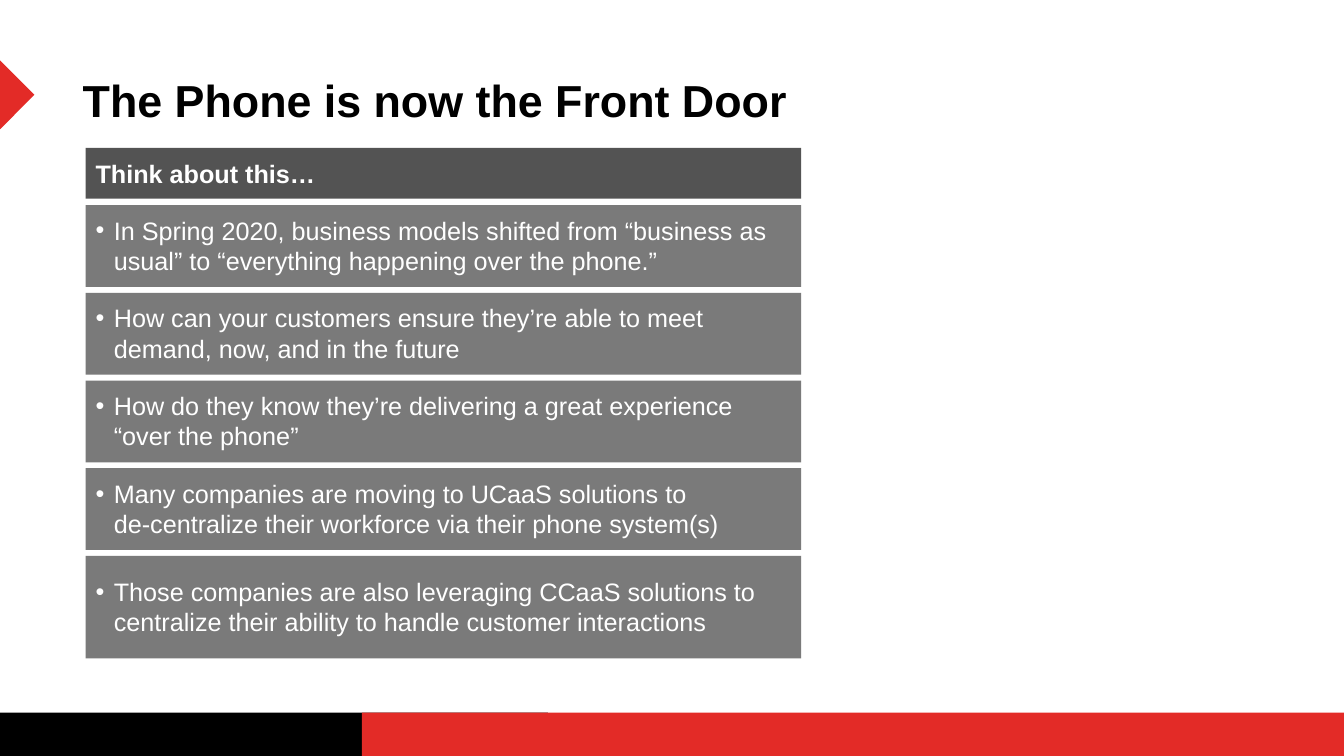
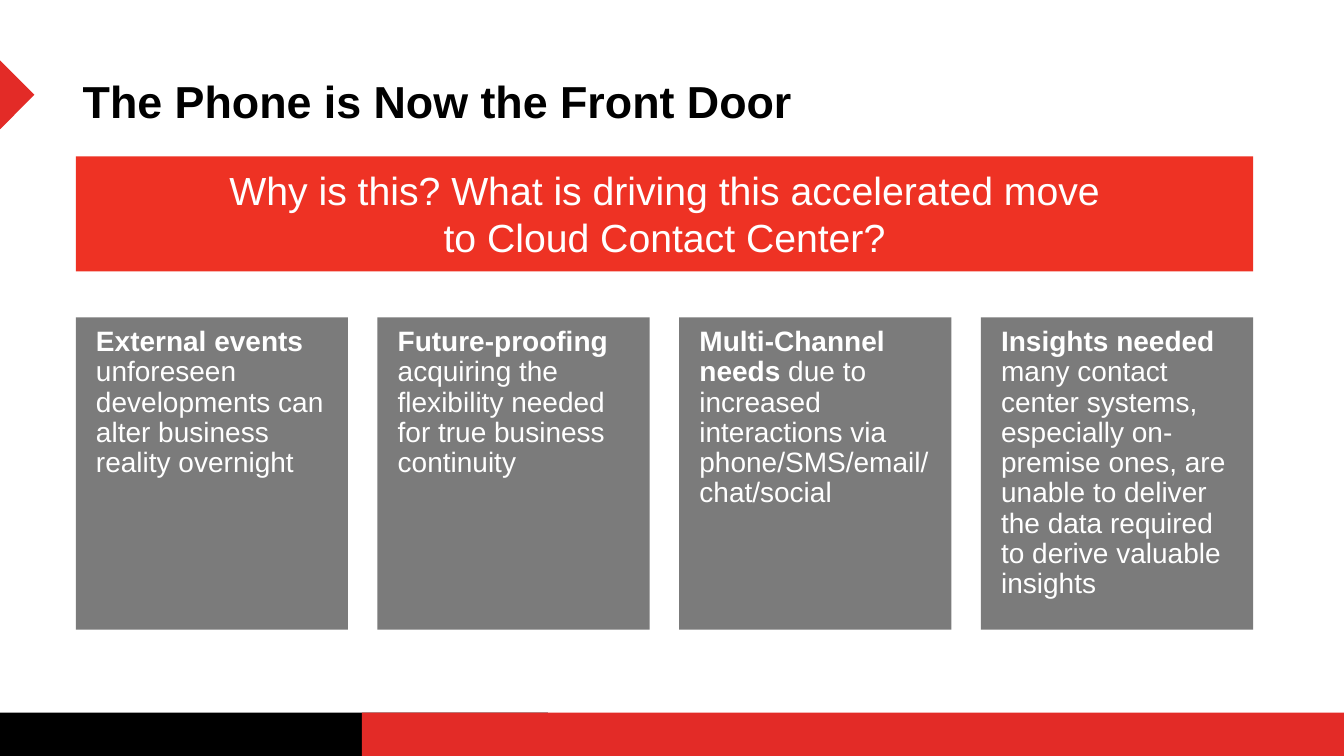
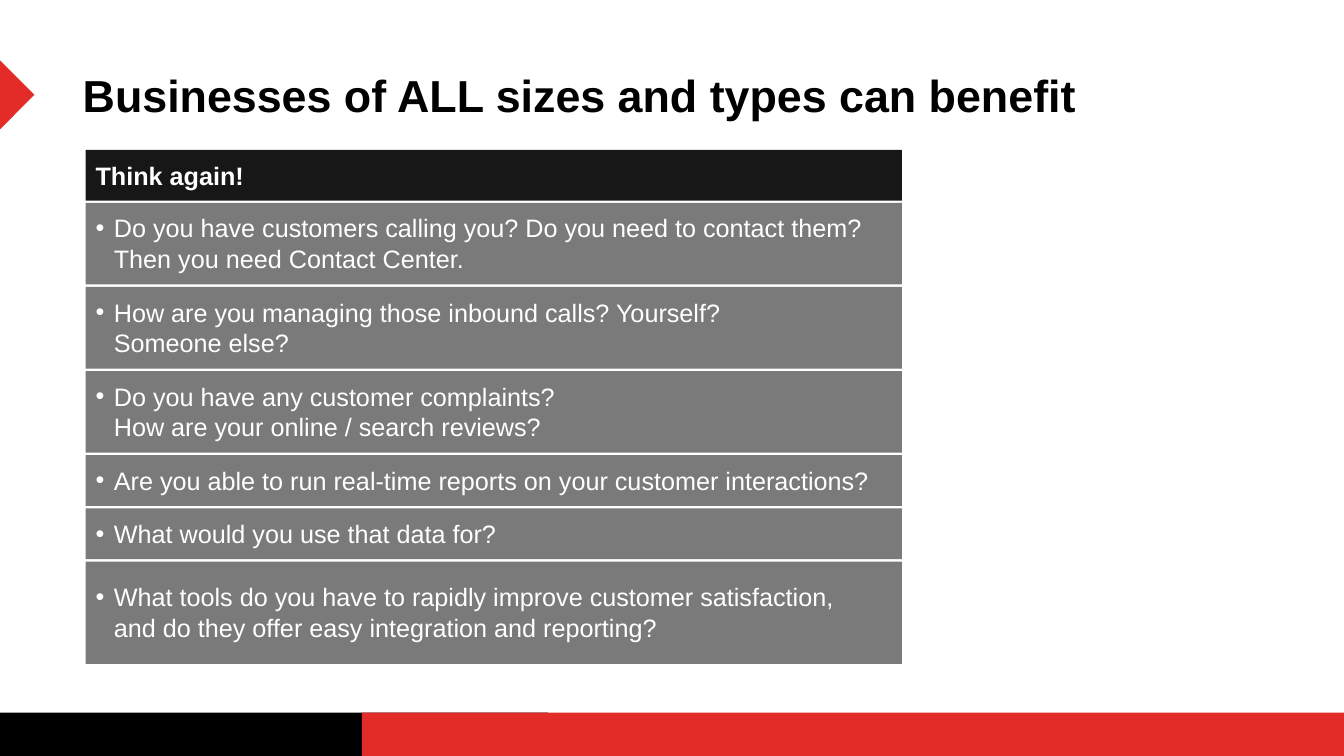
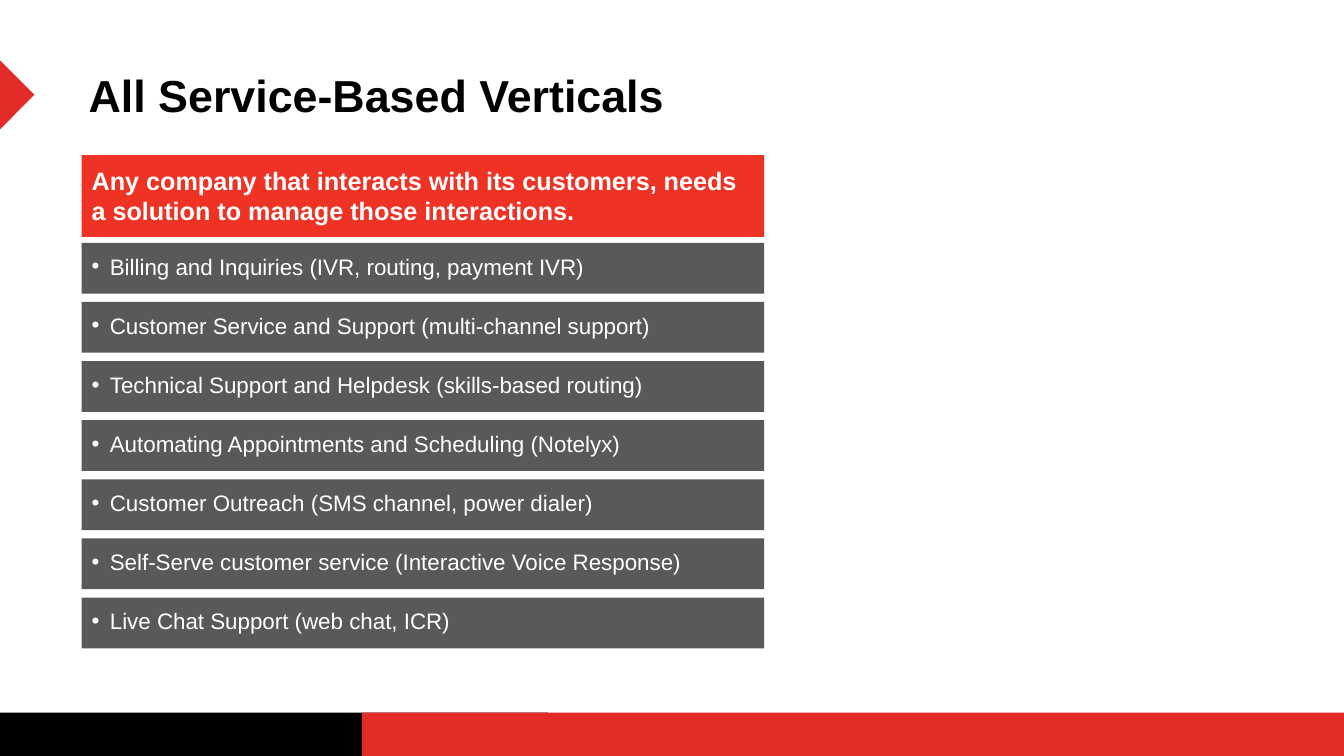
from dataclasses import dataclass

from lxml import etree
from pptx import Presentation
from pptx.dml.color import RGBColor
from pptx.enum.shapes import MSO_SHAPE
from pptx.enum.text import MSO_ANCHOR, MSO_AUTO_SIZE, PP_ALIGN
from pptx.oxml.ns import qn
from pptx.util import Cm, Pt

RECTANGLE = MSO_SHAPE.RECTANGLE
TRIANGLE = MSO_SHAPE.ISOSCELES_TRIANGLE
TOP, BOTTOM = MSO_ANCHOR.TOP, MSO_ANCHOR.BOTTOM
LEFT, CENTER = PP_ALIGN.LEFT, PP_ALIGN.CENTER
NO_AUTOFIT = MSO_AUTO_SIZE.NONE
TITLE_ONLY = 5


@dataclass(frozen=True)
class Fill:
    color: str
    opacity: int = 100


@dataclass(frozen=True)
class Theme:
    font: str = "Arial"
    black: str = "000000"
    white: str = "FFFFFF"
    band_red: Fill = Fill("E32B27")
    band_black: Fill = Fill("000000")
    accent: Fill = Fill("EE3224")
    charcoal: Fill = Fill("434343", 91)
    ink: Fill = Fill("000000", 91)
    gray: Fill = Fill("595959", 80)
    solid_gray: Fill = Fill("595959")
    card: Fill = Fill("434343", 70)
    title_size: int = 32
    banner_size: int = 28
    card_size: int = 20
    row_size: int = 18
    small_row_size: int = 16
    tight: float = 0.9
    inset: float = 0.25
    wide_inset: float = 0.51
    line_height: float = 0.78
    bullet_indent: float = 0.46


THEME = Theme()


@dataclass(frozen=True)
class Box:
    left: float
    top: float
    width: float
    height: float = 0

    def place(self, shape):
        shape.left, shape.top = Cm(self.left), Cm(self.top)
        shape.width, shape.height = Cm(self.width), Cm(self.height)


@dataclass(frozen=True)
class Row:
    text: str
    lines: int = 2
    padding: float = THEME.inset

    @property
    def height(self):
        return 2 * self.padding + self.lines * THEME.line_height


@dataclass(frozen=True)
class Panel:
    header: Row
    header_fill: Fill
    rows: tuple
    row_fill: Fill
    row_size: int
    header_gap: float
    row_gap: float


def style_font(font, size, color, bold=None):
    font.name = THEME.font
    font.size = Pt(size)
    font.color.rgb = RGBColor.from_string(color)
    font.bold = bold


def add_block(page, box, fill, preset=RECTANGLE):
    shape = page.shapes.add_shape(
        preset, Cm(box.left), Cm(box.top), Cm(box.width), Cm(box.height))
    shape.shadow.inherit = False
    shape.line.fill.background()
    shape.fill.solid()
    shape.fill.fore_color.rgb = RGBColor.from_string(fill.color)
    if fill.opacity < 100:
        color = shape.element.spPr.find(qn("a:solidFill")).find(qn("a:srgbClr"))
        etree.SubElement(color, qn("a:alpha"), val=str(fill.opacity * 1000))
    return shape


def add_bullet(para):
    properties = para._p.get_or_add_pPr()
    properties.set("marL", str(Cm(THEME.bullet_indent)))
    properties.set("indent", str(-Cm(THEME.bullet_indent)))
    etree.SubElement(properties, qn("a:buFont"), typeface=THEME.font)
    etree.SubElement(properties, qn("a:buChar"), char="•")


def add_text(shape, text, size, side=THEME.inset, padding=THEME.inset,
             bold=None, align=LEFT, bullet=False):
    frame = shape.text_frame
    frame.word_wrap = True
    frame.vertical_anchor = TOP
    frame.margin_left = frame.margin_right = Cm(side)
    frame.margin_top = frame.margin_bottom = Cm(padding)
    para = frame.paragraphs[0]
    para.alignment = align
    if bullet:
        add_bullet(para)
    style_font(para.font, size, THEME.white, bold)
    for index, line in enumerate(text.splitlines()):
        if index:
            para.add_line_break()
        para.add_run().text = line
    return para


def add_master_bands(deck, page):
    bands = [
        (Box(-0.03, 17.96, 13.84, 1.14), THEME.band_black, RECTANGLE, 0),
        (Box(-0.43, 1.96, 1.73, 0.86), THEME.band_red, TRIANGLE, 90),
        (Box(9.12, 17.96, 24.79, 1.14), THEME.band_red, RECTANGLE, 0),
    ]
    tree = deck.slide_master.element.cSld.spTree
    for number, (box, fill, preset, rotation) in enumerate(bands, start=100):
        shape = add_block(page, box, fill, preset)
        shape.rotation = rotation
        shape.element.nvSpPr.cNvPr.set("id", str(number))
        tree.append(shape.element)


def add_page(deck, title, left, top):
    page = deck.slides.add_slide(deck.slide_layouts[TITLE_ONLY])
    holder = page.shapes.title
    Box(left, top, 29.74, 2.87).place(holder)
    frame = holder.text_frame
    frame.text = title
    frame.word_wrap = True
    frame.auto_size = NO_AUTOFIT
    frame.vertical_anchor = BOTTOM
    para = frame.paragraphs[0]
    para.alignment = LEFT
    para.line_spacing = THEME.tight
    style_font(para.font, THEME.title_size, THEME.black, True)
    return page


def add_panel(page, box, panel):
    header = panel.header
    head_box = Box(box.left, box.top, box.width, header.height)
    add_text(add_block(page, head_box, panel.header_fill),
             header.text, THEME.row_size, bold=True)
    top = box.top + header.height + panel.header_gap
    for row in panel.rows:
        row_box = Box(box.left, top, box.width, row.height)
        add_text(add_block(page, row_box, panel.row_fill), row.text,
                 panel.row_size, padding=row.padding, bullet=True)
        top += row.height + panel.row_gap


def add_banner(page, box, text):
    add_text(add_block(page, box, THEME.accent), text,
             THEME.banner_size, align=CENTER)


def add_cards(page, box, cards, card_width):
    pitch = (box.width - card_width) / (len(cards) - 1)
    for index, (lead, rest) in enumerate(cards):
        card_box = Box(box.left + index * pitch, box.top, card_width, box.height)
        para = add_text(add_block(page, card_box, THEME.card), lead,
                        THEME.card_size, side=THEME.wide_inset)
        para.line_spacing = THEME.tight
        para.runs[0].font.bold = True
        span = para.add_run()
        span.text = " " + rest
        span.font.bold = False


def build_front_door(deck):
    page = add_page(deck, "The Phone is now the Front Door", 1.83, 0.46)
    add_master_bands(deck, page)
    rows = (
        Row("In Spring 2020, business models shifted from “business as usual” "
            "to “everything happening over the phone.”"),
        Row("How can your customers ensure they’re able to meet demand, now, "
            "and in the future"),
        Row("How do they know they’re delivering a great experience "
            "“over the phone”"),
        Row("Many companies are moving to UCaaS solutions to\n"
            "de-centralize their workforce via their phone system(s)"),
        Row("Those companies are also leveraging CCaaS solutions to centralize "
            "their ability to handle customer interactions",
            padding=THEME.wide_inset),
    )
    add_panel(page, Box(2.16, 3.73, 18.03), Panel(
        Row("Think about this…", 1), THEME.charcoal, rows, THEME.gray,
        THEME.row_size, header_gap=0.16, row_gap=0.15))


def build_drivers(deck):
    page = add_page(deck, "The Phone is Now the Front Door", 1.83, 0.48)
    add_banner(page, Box(1.91, 3.94, 29.67, 2.9),
               "Why is this? What is driving this accelerated move\n"
               "to Cloud Contact Center?")
    add_cards(page, Box(1.91, 8, 29.67, 7.87), [
        ("External events",
         "unforeseen developments can alter business reality overnight"),
        ("Future-proofing",
         "acquiring the flexibility needed for true business continuity"),
        ("Multi-Channel needs",
         "due to increased interactions via phone/SMS/email/chat/social"),
        ("Insights needed",
         "many contact center systems, especially on-premise ones, are unable "
         "to deliver the data required to derive valuable insights"),
    ], card_width=6.86)


def build_benefit(deck):
    page = add_page(deck, "Businesses of ALL sizes and types can benefit", 1.83, 0.33)
    rows = (
        Row("Do you have customers calling you? Do you need to contact them? "
            "Then you need Contact Center."),
        Row("How are you managing those inbound calls? Yourself?\nSomeone else?"),
        Row("Do you have any customer complaints?\n"
            "How are your online / search reviews?"),
        Row("Are you able to run real-time reports on your customer interactions?", 1),
        Row("What would you use that data for?", 1),
        Row("What tools do you have to rapidly improve customer satisfaction,\n"
            "and do they offer easy integration and reporting?",
            padding=THEME.wide_inset),
    )
    add_panel(page, Box(2.16, 3.78, 20.57), Panel(
        Row("Think again!", 1), THEME.ink, rows, THEME.gray,
        THEME.row_size, header_gap=0.05, row_gap=0.06))


def build_verticals(deck):
    page = add_page(deck, "All Service-Based Verticals", 1.98, 0.33)
    services = (
        "Billing and Inquiries (IVR, routing, payment IVR)",
        "Customer Service and Support (multi-channel support)",
        "Technical Support and Helpdesk (skills-based routing)",
        "Automating Appointments and Scheduling (Notelyx)",
        "Customer Outreach (SMS channel, power dialer)",
        "Self-Serve customer service (Interactive Voice Response)",
        "Live Chat Support (web chat, ICR)",
    )
    add_panel(page, Box(2.06, 3.91, 17.2), Panel(
        Row("Any company that interacts with its customers, needs a solution "
            "to manage those interactions."),
        THEME.accent, tuple(Row(service, 1) for service in services),
        THEME.solid_gray, THEME.small_row_size, header_gap=0.15, row_gap=0.21))


def main():
    deck = Presentation()
    deck.slide_width, deck.slide_height = Cm(33.87), Cm(19.05)
    for build in (build_front_door, build_drivers, build_benefit, build_verticals):
        build(deck)
    deck.save("out.pptx")


if __name__ == "__main__":
    main()
